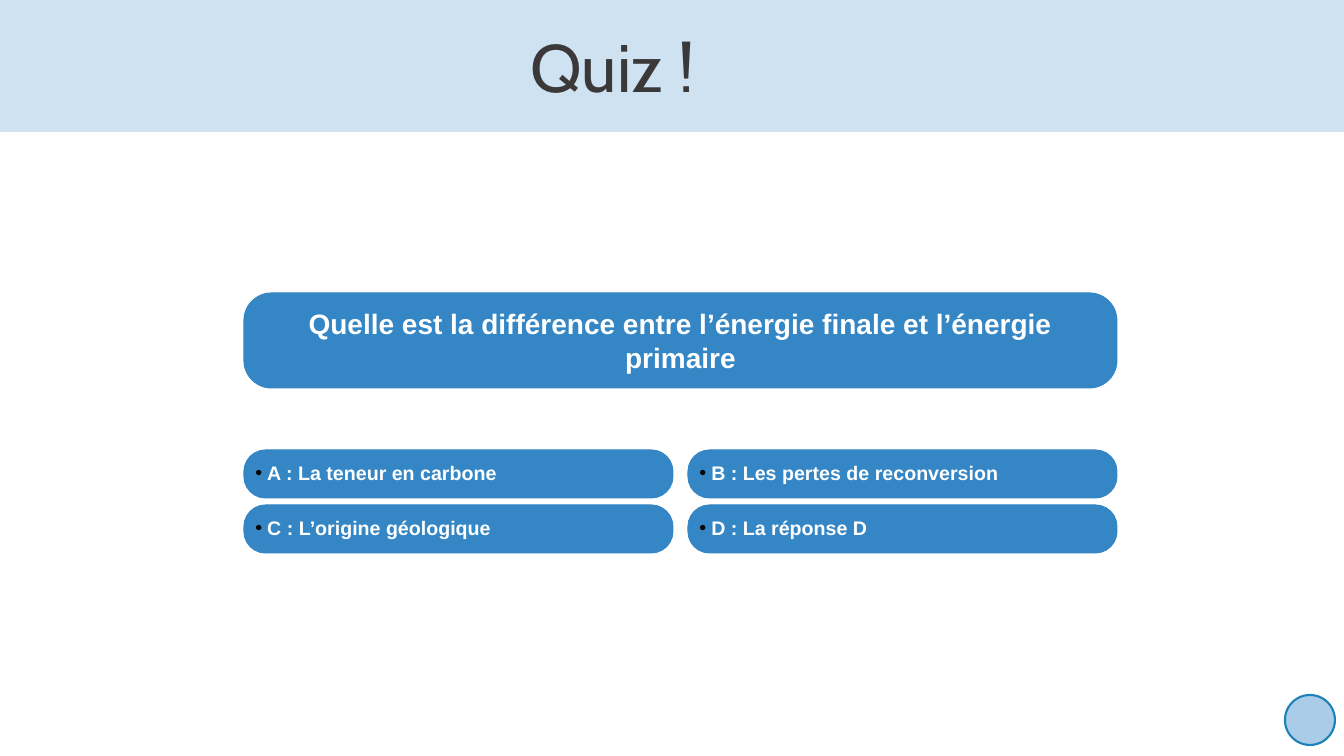
from lxml import etree
from pptx import Presentation
from pptx.dml.color import RGBColor
from pptx.enum.shapes import MSO_SHAPE as Shape
from pptx.enum.text import MSO_ANCHOR as Anchor, PP_ALIGN as Align
from pptx.oxml.ns import qn
from pptx.util import Emu, Pt

# Content
TITLE = "Quiz !"
QUESTION = "Quelle est la différence entre l’énergie finale et l’énergie primaire"
ANSWERS = [
    "A : La teneur en carbone",
    "B : Les pertes de reconversion",
    "C : L’origine géologique",
    "D : La réponse D",
]
COLORS = {
    "band": "CEE2F1", "blue": "3486C5", "title": "3A3838", "white": "FFFFFF",
    "bullet": "000000", "disc": "AACCE7", "ring": "1C82B8",
}

# Geometry in px
PX = 914400 / 100.8
LEFT, TOP, WIDTH, GAP = 244, 450, 873, 15
ANSWER_WIDTH, ANSWER_HEIGHT, ROW_STEP = (WIDTH - GAP) // 2, 48, 55
BULLET_INDENT = 12


def px(length):
    return Emu(round(length * PX))


def color(name):
    return RGBColor.from_string(COLORS[name])


def add_shape(kind, left, top, width, height, fill, line=None, line_width=0.75):
    shape = page.shapes.add_shape(kind, px(left), px(top), px(width), px(height))
    shape.shadow.inherit = False
    shape.fill.solid()
    shape.fill.fore_color.rgb = color(fill)
    if line:
        shape.line.color.rgb = color(line)
        shape.line.width = Pt(line_width)
    else:
        shape.line.fill.background()
    return shape


def write(shape, text, size, name, font, align, bold=False):
    frame = shape.text_frame
    frame.word_wrap = True
    frame.vertical_anchor = Anchor.MIDDLE
    para = frame.paragraphs[0]
    para.alignment = align
    span = para.add_run()
    span.text = text
    span.font.size = Pt(size)
    span.font.name = font
    span.font.bold = bold
    span.font.color.rgb = color(name)
    return para


def add_bullet(para):
    properties = para._p.get_or_add_pPr()
    properties.set("marL", str(px(BULLET_INDENT)))
    properties.set("indent", str(-px(BULLET_INDENT)))
    tint = etree.SubElement(properties, qn("a:buClr"))
    etree.SubElement(tint, qn("a:srgbClr"), val=COLORS["bullet"])
    etree.SubElement(properties, qn("a:buFont"), typeface="Arial")
    etree.SubElement(properties, qn("a:buChar"), char="•")


deck = Presentation()
deck.slide_width, deck.slide_height = px(1344), px(756)
page = deck.slides.add_slide(deck.slide_layouts[5])

# Title over its band
band = add_shape(Shape.RECTANGLE, 0, 0, 1344, 132, "band")
title = page.shapes.title
band.element.addnext(title.element)
title.left, title.top, title.width, title.height = px(108), px(12), px(1009), px(108)
write(title, TITLE, 48, "title", "Cabin", Align.CENTER)

# Question
question = add_shape(Shape.ROUNDED_RECTANGLE, LEFT, 293, WIDTH, 95, "blue", "blue")
question.adjustments[0] = 0.29
write(question, QUESTION, 20, "white", "Arial", Align.CENTER, bold=True)

# Answers in a grid of two columns
for index, answer in enumerate(ANSWERS):
    row, column = divmod(index, 2)
    pill = add_shape(
        Shape.ROUNDED_RECTANGLE, LEFT + column * (ANSWER_WIDTH + GAP),
        TOP + row * ROW_STEP, ANSWER_WIDTH, ANSWER_HEIGHT, "blue", "blue")
    pill.adjustments[0] = 0.45
    frame = pill.text_frame
    frame.margin_left, frame.margin_right = px(5), px(5)
    frame.margin_top, frame.margin_bottom = px(0), px(3)
    add_bullet(write(pill, answer, 14, "white", "Arial", Align.LEFT, bold=True))

# Plain corner disc
add_shape(Shape.OVAL, 1285, 695, 50, 50, "disc", "ring", 1.5)

deck.save("out.pptx")
